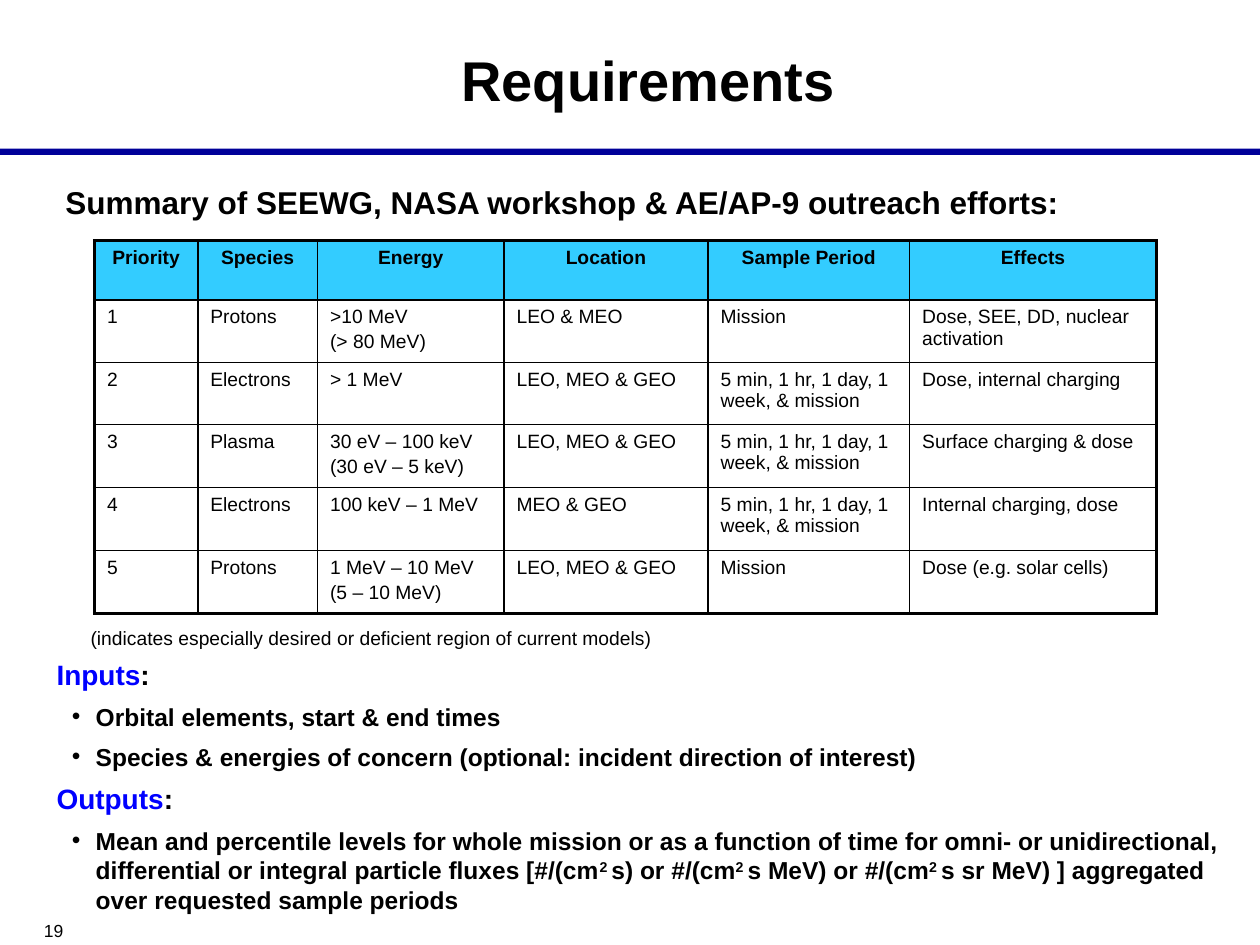
from pptx import Presentation
from pptx.dml.color import RGBColor
from pptx.enum.shapes import MSO_SHAPE
from pptx.enum.text import MSO_ANCHOR, MSO_AUTO_SIZE, PP_ALIGN
from pptx.oxml.ns import qn
from pptx.util import Inches, Pt
from lxml.etree import SubElement

COLORS = {"text": "000000", "accent": "0000FF", "bar": "000099", "header": "33CCFF"}

prs = Presentation()
prs.slide_width, prs.slide_height = Inches(10), Inches(7.5)
s = prs.slides.add_slide(prs.slide_layouts[1])


def area(left, top, width, height):
    """Turn percentages of the slide's size into a position and a size."""
    w, h = prs.slide_width, prs.slide_height
    return int(w * left / 100), int(h * top / 100), int(w * width / 100), int(h * height / 100)


def style(p, size, bold=False, color="text"):
    for r in p.runs:
        r.font.name, r.font.size, r.font.bold = "Arial", Pt(size), bold
        r.font.color.rgb = RGBColor.from_string(COLORS[color])


# Rule under the title
bar = s.shapes.add_shape(MSO_SHAPE.RECTANGLE, *area(0, 15.73, 100, 0.67))
bar.shadow.inherit = False
bar.fill.solid()
bar.fill.fore_color.rgb = RGBColor.from_string(COLORS["bar"])
bar.line.fill.background()

# Title
title = s.shapes.title
title.left, title.top, title.width, title.height = area(14.8, 3.87, 73.3, 8.93)
tf = title.text_frame
tf.text = "Requirements"
tf.auto_size = MSO_AUTO_SIZE.NONE
tf.vertical_anchor = MSO_ANCHOR.MIDDLE
tf.paragraphs[0].alignment = PP_ALIGN.CENTER
style(tf.paragraphs[0], 32, bold=True)

# Single-line texts: text, area, size, bold, side inset
LINES = [
    ("Summary of SEEWG, NASA workshop & AE/AP-9 outreach efforts:",
     (4.1, 18.67, 94.4, 5.33), 18, True, 0.11),
    ("(indicates especially desired or deficient region of current models)",
     (6.2, 65.6, 46.8, 3.87), 11, False, 0.1),
    ("19", (2.5, 96.67, 10.8, 3.6), 10, False, 0.1),
]
for text, box, size, bold, inset in LINES:
    tf = s.shapes.add_textbox(*area(*box)).text_frame
    tf.word_wrap = True
    tf.margin_left = tf.margin_right = Inches(inset)
    tf.text = text
    style(tf.paragraphs[0], size, bold)

# Requirements table
WEEK = "5 min, 1 hr, 1 day, 1 week, & mission"
ROWS = [
    ("Priority", "Species", "Energy", "Location", "Sample Period", "Effects"),
    ("1", "Protons", ">10 MeV\n(> 80 MeV)", "LEO & MEO", "Mission",
     "Dose, SEE, DD, nuclear activation"),
    ("2", "Electrons", "> 1 MeV", "LEO, MEO & GEO", WEEK, "Dose, internal charging"),
    ("3", "Plasma", "30 eV – 100 keV\n(30 eV – 5 keV)", "LEO, MEO & GEO", WEEK,
     "Surface charging & dose"),
    ("4", "Electrons", "100 keV – 1 MeV", "MEO & GEO", WEEK, "Internal charging, dose"),
    ("5", "Protons", "1 MeV – 10 MeV\n(5 – 10 MeV)", "LEO, MEO & GEO", "Mission",
     "Dose (e.g. solar cells)"),
]
COL_WIDTHS = (8.2, 9.5, 14.8, 16.2, 16, 19.6)
ROW_HEIGHTS = (6.27, 6.53, 6.53, 6.67, 6.67, 6.67)
last_row, last_col = len(ROWS) - 1, len(COL_WIDTHS) - 1

table = s.shapes.add_table(len(ROWS), len(COL_WIDTHS), *area(7.5, 25.47, 84.3, 39.6)).table
for col, width in zip(table.columns, COL_WIDTHS):
    col.width = int(prs.slide_width * width / 100)
for row, height in zip(table.rows, ROW_HEIGHTS):
    row.height = int(prs.slide_height * height / 100)

for i, row in enumerate(ROWS):
    for j, text in enumerate(row):
        cell = table.cell(i, j)
        # Heavy lines on the outer edge, thin ones inside; borders precede the fill
        outer = {"lnL": j == 0, "lnR": j == last_col, "lnT": i == 0, "lnB": i == last_row}
        tcPr = cell._tc.get_or_add_tcPr()
        for tag, heavy in outer.items():
            ln = SubElement(tcPr, qn(f"a:{tag}"), w=str(Pt(2.25 if heavy else 1)))
            SubElement(SubElement(ln, qn("a:solidFill")), qn("a:srgbClr"), val=COLORS["text"])
        if i == 0:
            cell.fill.solid()
            cell.fill.fore_color.rgb = RGBColor.from_string(COLORS["header"])
        else:
            cell.fill.background()
        cell.text_frame.text = text
        for n, p in enumerate(cell.text_frame.paragraphs):
            p.alignment = PP_ALIGN.CENTER if i == 0 else PP_ALIGN.LEFT
            p.space_before = Pt(2.2 if n else 0)
            style(p, 11, bold=i == 0)

# Inputs and outputs; "^" separates normal text from superscripts
LIST = [
    (0, "Inputs"),
    (1, "Orbital elements, start & end times"),
    (1, "Species & energies of concern (optional: incident direction of interest)"),
    (0, "Outputs"),
    (1, "Mean and percentile levels for whole mission or as a function of time for omni- or "
        "unidirectional, differential or integral particle fluxes [#/(cm^2 ^s) or #/(cm^2 ^s MeV) "
        "or #/(cm^2 ^s sr MeV) ] aggregated over requested sample periods"),
]
body = s.placeholders[1]
body.left, body.top, body.width, body.height = area(3.4, 68.93, 96.6, 24.93)
tf = body.text_frame
tf.auto_size = MSO_AUTO_SIZE.NONE
tf.margin_left = tf.margin_right = Inches(0.11)
for n, (level, text) in enumerate(LIST):
    p = tf.add_paragraph() if n else tf.paragraphs[0]
    p.level = level
    p.space_before = Pt(6 if n else 0)
    pPr = p._p.get_or_add_pPr()
    margin, indent = ((0.18, -0.18), (0.31, -0.19))[level]
    pPr.set("marL", str(Inches(margin)))
    pPr.set("indent", str(Inches(indent)))
    if level == 0:
        SubElement(pPr, qn("a:buNone"))
        parts = [text, ":"]
    else:
        SubElement(SubElement(pPr, qn("a:buClr")), qn("a:srgbClr"), val=COLORS["text"])
        SubElement(pPr, qn("a:buFont"), typeface="Arial")
        SubElement(pPr, qn("a:buChar"), char="•")
        parts = text.split("^")
    for k, part in enumerate(parts):
        r = p.add_run()
        r.text = part
        if level and k % 2:
            r._r.get_or_add_rPr().set("baseline", "30000")
    style(p, (16, 14)[level], bold=True)
    if level == 0:
        p.runs[0].font.color.rgb = RGBColor.from_string(COLORS["accent"])

prs.save("out.pptx")
